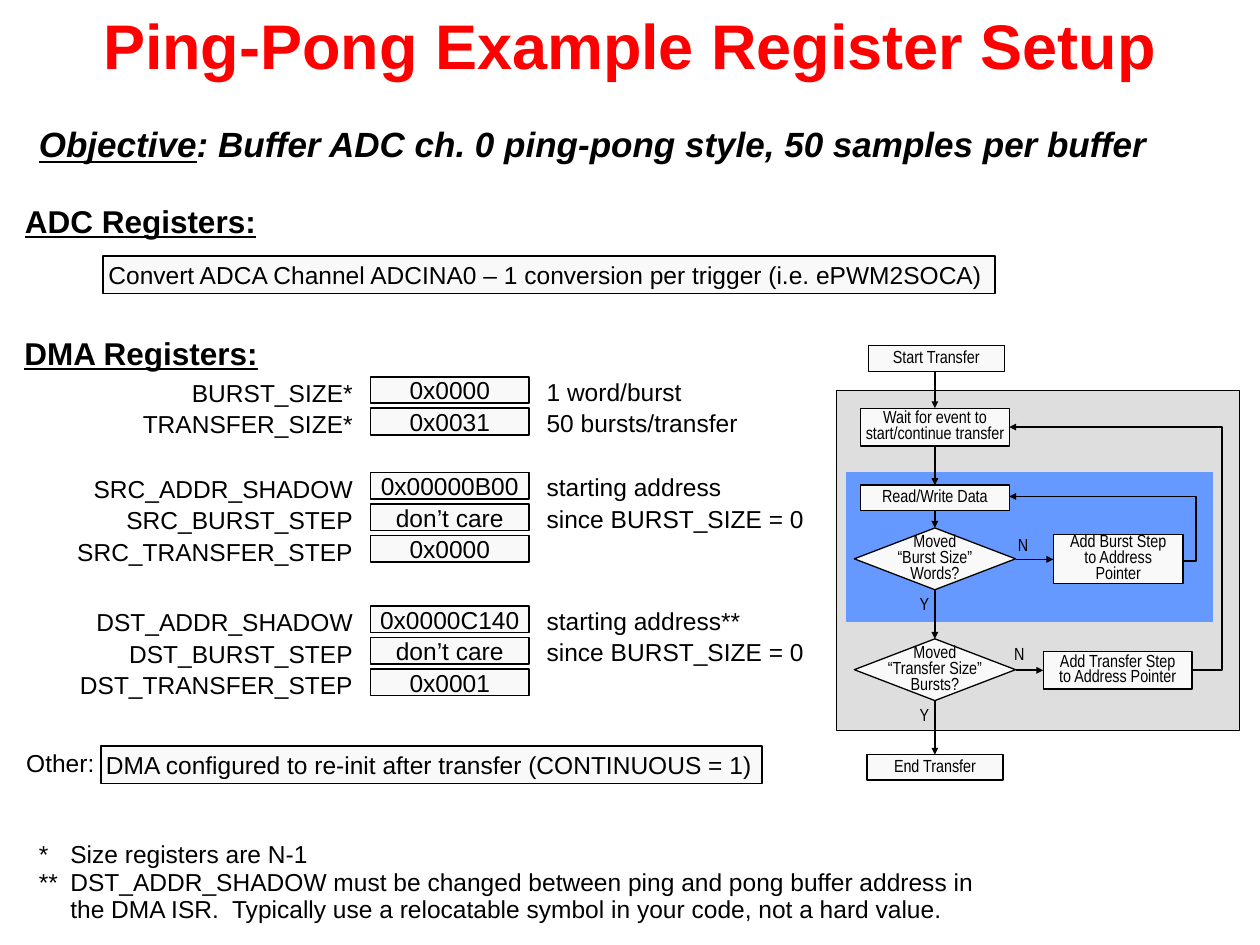
from pptx import Presentation
from pptx.dml.color import RGBColor
from pptx.enum.shapes import MSO_CONNECTOR as Link, MSO_SHAPE as Form
from pptx.enum.text import MSO_ANCHOR as Anchor, PP_ALIGN as Align
from pptx.oxml.ns import qn
from pptx.util import Inches, Pt
from lxml.etree import SubElement

BLACK = RGBColor(0, 0, 0)
RED = RGBColor(0xFF, 0, 0)
PALE = RGBColor(0xF9, 0xF9, 0xF9)
GREY = RGBColor(0xDE, 0xDE, 0xDE)
BLUE = RGBColor(0x66, 0x99, 0xFF)

prs = Presentation()
prs.slide_width, prs.slide_height = Inches(10), Inches(7.5)
shapes = prs.slides.add_slide(prs.slide_layouts[6]).shapes


def put(at, text="", form=None, fill=PALE, edge=BLACK, width=1, frame={}, para={}, font={}):
    """Add a text box, or a filled shape when a form is given."""
    at = [Inches(n) for n in at]
    if form is None:
        shape = shapes.add_textbox(*at)
    else:
        shape = shapes.add_shape(form, *at)
        shape.shadow.inherit = False
        shape.fill.solid()
        shape.fill.fore_color.rgb = fill
        shape.line.color.rgb = edge
        shape.line.width = Pt(width)
    body = shape.text_frame
    body.text = text
    for key, val in ({"word_wrap": True} | frame).items():
        setattr(body, key, val)
    for part in body.paragraphs:
        for key, val in ({"alignment": Align.LEFT} | para).items():
            setattr(part, key, val)
        for run in part.runs:
            run.font.color.rgb = BLACK
            for key, val in ({"name": "Arial", "size": Pt(14)} | font).items():
                setattr(run.font, key, val)
    return shape


def ink(shape):
    """Draw a line in black with an arrowhead at its end and no shadow."""
    shape.line.color.rgb = BLACK
    shape.line.width = Pt(1)
    SubElement(shape.line._get_or_add_ln(), qn("a:tailEnd"), type="triangle", w="sm", len="sm")
    props = shape._element.spPr
    if props.find(qn("a:effectLst")) is None:
        SubElement(props, qn("a:effectLst"))


MID = {"word_wrap": False, "vertical_anchor": Anchor.MIDDLE, "margin_top": 0, "margin_bottom": 0}
WIDE = MID | {"word_wrap": True, "margin_left": Inches(0.04), "margin_right": 0}
SLIM = {"word_wrap": False, "margin_left": 0, "margin_right": 0}
MIDDLE = {"alignment": Align.CENTER}
HEAD = {"size": Pt(18), "bold": True, "underline": True}
SMALL = {"name": "Arial Narrow", "size": Pt(10)}
TIGHT = {"line_spacing": 0.75}

# Title and objective
title = put((0, 0, 10, 0.81), "Ping-Pong Example Register Setup",
            frame={"vertical_anchor": Anchor.MIDDLE, "margin_bottom": Inches(0.16)},
            para=MIDDLE, font={"size": Pt(36), "bold": True})
title.text_frame.paragraphs[0].runs[0].font.color.rgb = RED

goal = {"name": "Arial", "size": Pt(20), "bold": True, "italic": True}
line = put((0.21, 0.99, 9.58, 0.37), "Objective", para={"line_spacing": 0.8},
           font=goal | {"underline": True}).text_frame.paragraphs[0]
rest = line.add_run()
rest.text = ": Buffer ADC ch. 0 ping-pong style, 50 samples per buffer"
rest.font.color.rgb = BLACK
for key, val in goal.items():
    setattr(rest.font, key, val)

# Section heads
for at, text in [((0.1, 1.61, 2.03, 0.34), "ADC Registers:"), ((0.09, 2.66, 2.06, 0.34), "DMA Registers:")]:
    put(at, text, frame=SLIM, para=MIDDLE | {"line_spacing": 0.8}, font=HEAD)

# Wide boxes
put((0.82, 2.03, 7.08, 0.3), "Convert ADCA Channel ADCINA0 – 1 conversion per trigger (i.e. ePWM2SOCA)",
    Form.RECTANGLE, frame=WIDE)
put((0.11, 5.89, 1.07, 0.33), "Other:")
put((0.8, 5.92, 5.25, 0.3), "DMA configured to re-init after transfer (CONTINUOUS = 1)", Form.RECTANGLE, frame=WIDE)

# Register rows: name, value, note
groups = [
    (2.99, [("BURST_SIZE*", "0x0000", "1 word/burst"),
            ("TRANSFER_SIZE*", "0x0031", "50 bursts/transfer")]),
    (3.75, [("SRC_ADDR_SHADOW", "0x00000B00", "starting address"),
            ("SRC_BURST_STEP", "don’t care", "since BURST_SIZE = 0"),
            ("SRC_TRANSFER_STEP", "0x0000", "")]),
    (4.81, [("DST_ADDR_SHADOW", "0x0000C140", "starting address**"),
            ("DST_BURST_STEP", "don’t care", "since BURST_SIZE = 0"),
            ("DST_TRANSFER_STEP", "0x0001", "")]),
]
for top, rows in groups:
    for i, (name, value, note) in enumerate(rows):
        y = top + 0.25 * i
        put((0.4, y - 0.04, 2.5, 0.33), name, para={"alignment": Align.RIGHT})
        put((2.94, y, 1.26, 0.21), value, Form.RECTANGLE, frame=MID, para=MIDDLE)
        if note:
            put((4.24, y - 0.05, 2.3, 0.33), note)

# Footnotes with a hanging indent
notes = [
    (6.61, 0.33, 1.0, "*\tSize registers are N-1"),
    (6.86, 0.52, 0.9, "**\tDST_ADDR_SHADOW must be changed between ping and pong buffer address in the DMA ISR.  "
                      "Typically use a relocatable symbol in your code, not a hard value."),
]
for top, high, gap, text in notes:
    note = put((0.21, top, 7.81, high), text, para={"line_spacing": gap})
    props = note.text_frame.paragraphs[0]._p.get_or_add_pPr()
    props.set("marL", str(Inches(0.25)))
    props.set("indent", str(-Inches(0.25)))

# Flow chart panels
put((6.64, 3.1, 3.2, 2.7), form=Form.RECTANGLE, fill=GREY, width=0.75)
put((6.72, 3.75, 2.9, 1.18), form=Form.RECTANGLE, fill=BLUE, edge=BLUE, width=0.5)

# Flow chart steps
steps = [
    ((6.89, 2.74, 1.08, 0.21), "Start Transfer", Form.RECTANGLE),
    ((6.83, 3.24, 1.18, 0.3), "Wait for event to\nstart/continue transfer", Form.RECTANGLE),
    ((6.83, 3.85, 1.18, 0.2), "Read/Write Data", Form.RECTANGLE),
    ((6.78, 4.19, 1.28, 0.49), "Moved\n“Burst Size”\nWords?", Form.DIAMOND),
    ((8.36, 4.24, 1.03, 0.39), "Add Burst Step\nto Address\nPointer", Form.RECTANGLE),
    ((6.78, 5.07, 1.28, 0.49), "Moved\n“Transfer Size”\nBursts?", Form.DIAMOND),
    ((8.28, 5.17, 1.18, 0.3), "Add Transfer Step\nto Address Pointer", Form.RECTANGLE),
    ((6.88, 5.99, 1.08, 0.2), "End Transfer", Form.RECTANGLE),
]
for at, text, form in steps:
    put(at, text, form, width=0.75, frame=MID, para=MIDDLE | TIGHT, font=SMALL)

# Branch labels
for x, y, text in [(7.98, 4.23, "N"), (7.95, 5.09, "N"), (7.2, 4.7, "Y"), (7.2, 5.58, "Y")]:
    put((x, y, 0.28, 0.23), text, frame={"word_wrap": False}, para=TIGHT, font=SMALL)

# Straight arrows: down the main column, then out to the right
arrows = [(7.42, a, 7.42, b) for a, b in
          [(2.95, 3.24), (3.54, 3.85), (4.05, 4.19), (4.68, 5.07), (5.56, 5.99)]]
arrows += [(8.06, 4.44, 8.36, 4.44), (8.06, 5.32, 8.28, 5.32)]
for ends in arrows:
    ink(shapes.add_connector(Link.STRAIGHT, *[Inches(n) for n in ends]))

# Loop back to the read step
path = [(Inches(x), Inches(y)) for x, y in [(9.39, 4.45), (9.49, 4.45), (9.49, 3.94), (8.01, 3.94)]]
draw = shapes.build_freeform(*path[0])
draw.add_line_segments(path[1:], close=False)
loop = draw.convert_to_shape()
loop.shadow.inherit = False
loop.fill.background()
ink(loop)

# Loop back to the wait step, bending out to the right
bend = shapes.add_connector(Link.ELBOW, Inches(9.45), Inches(5.32), Inches(8.01), Inches(3.39))
ink(bend)
guide = bend._element.spPr.find(qn("a:prstGeom")).find(qn("a:avLst"))
SubElement(guide, qn("a:gd"), name="adj1", fmla="val -17300")

prs.save("out.pptx")
